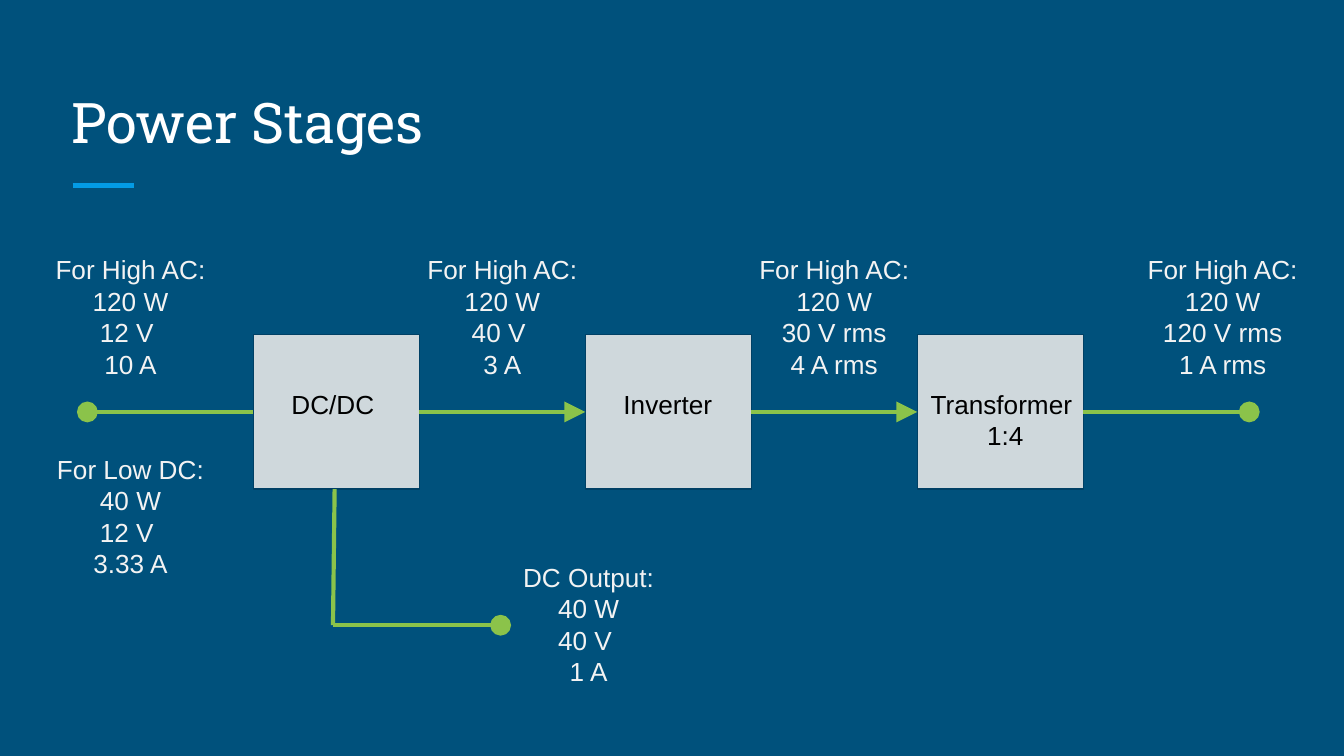
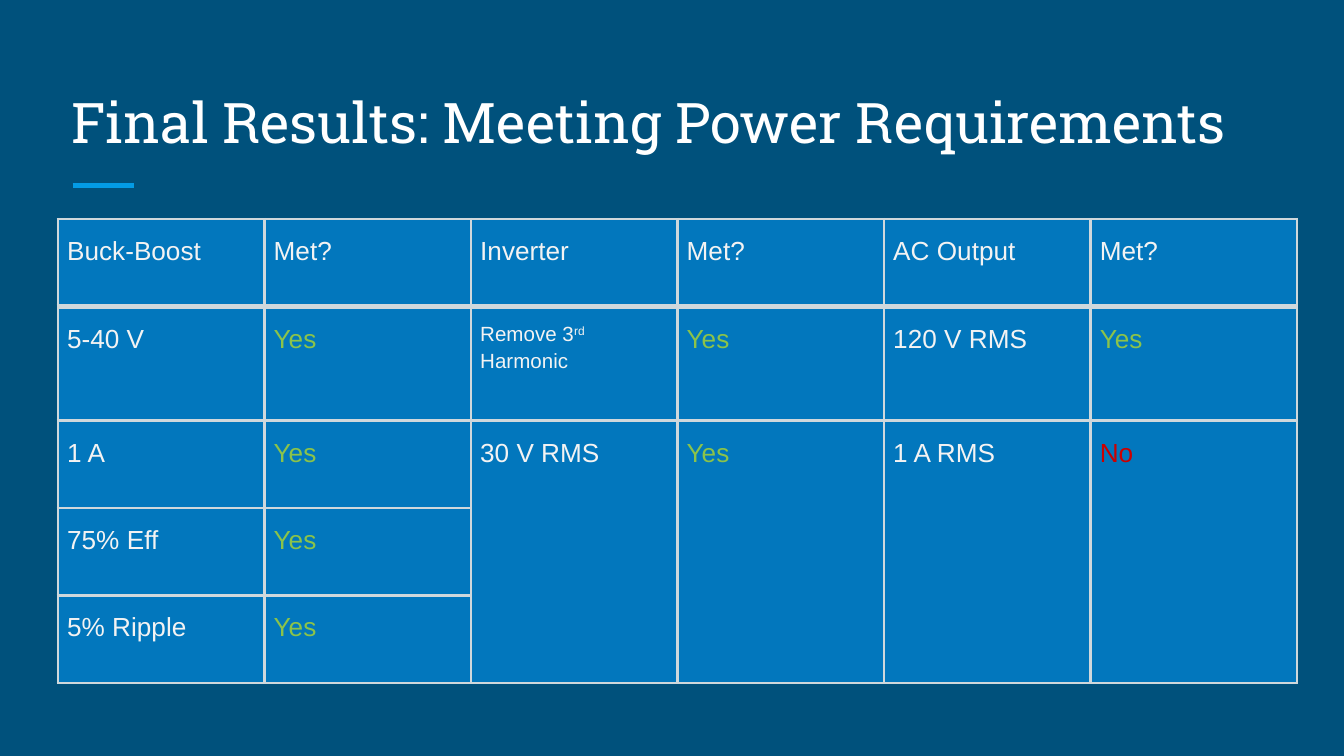
from typing import NamedTuple

from pptx import Presentation
from pptx.dml.color import RGBColor
from pptx.enum.shapes import MSO_CONNECTOR as Connector, MSO_SHAPE as Preset
from pptx.enum.text import MSO_ANCHOR as Anchor, MSO_AUTO_SIZE as AutoSize, PP_ALIGN as Align
from pptx.oxml.ns import qn
from pptx.oxml.xmlchemy import OxmlElement
from pptx.util import Emu, Inches, Pt

NAVY = RGBColor(0x00, 0x51, 0x7C)
DARK_NAVY = RGBColor(0x00, 0x40, 0x65)
CELL_BLUE = RGBColor(0x02, 0x77, 0xBD)
ACCENT = RGBColor(0x03, 0x9B, 0xE5)
PALE = RGBColor(0xCF, 0xD8, 0xDC)
GREEN = RGBColor(0x8B, 0xC3, 0x4A)
RED = RGBColor(0xCC, 0x00, 0x00)
WHITE = RGBColor(0xFF, 0xFF, 0xFF)
OFF_WHITE = RGBColor(0xF3, 0xF3, 0xF3)
BLACK = RGBColor(0x00, 0x00, 0x00)

TITLE_FONT = "Roboto Slab"
BODY_FONT = "Arial"
TITLE_ONLY = 5
SLIDE_WIDTH = Inches(10)
SLIDE_HEIGHT = SLIDE_WIDTH * 9 // 16

GRID_LEFT, GRID_TOP = Inches(0.65), Inches(2.49)
COLUMN, ROW = Inches(2.47) // 2, Inches(1.15)
WIRE_ROW, OUTPUT_ROW = 0.5, 1.88
DROP_COLUMN = 1.48
INSET = Inches(0.1)

CONTENT_LEFT = Inches(0.43)
TABLE_TOP, TABLE_WIDTH = Inches(1.63), Inches(9.22)
ROW_HEIGHTS = (0.65, 0.85, 0.65, 0.65, 0.65)
RESULTS = (
    ("Buck-Boost", "Met?", "Inverter", "Met?", "AC Output", "Met?"),
    ("5-40 V", "Yes", "Remove 3^rd^ Harmonic", "Yes", "120 V RMS", "Yes"),
    ("1 A", "Yes", "30 V RMS", "Yes", "1 A RMS", "No"),
    ("75% Eff", "Yes"),
    ("5% Ripple", "Yes"),
)
ANSWER_COLORS = {"Yes": GREEN, "No": RED}


class Wire(NamedTuple):
    start: tuple[float, float]
    end: tuple[float, float]
    head: str = ""
    tail: str = ""


class Label(NamedTuple):
    column: float
    row: float
    columns: float
    rows: float
    lines: tuple[str, ...]
    color: RGBColor
    alignments: tuple[Align, ...]


def block_label(column: float, columns: float, *lines: str) -> Label:
    return Label(column, 0.26, columns, 0.65, lines, BLACK, (Align.LEFT, Align.CENTER))


def rating(column: float, row: float, *lines: str) -> Label:
    return Label(column, row, 1.12, 1, lines, OFF_WHITE, (Align.CENTER,) * len(lines))


BLOCK_COLUMNS = (1, 3, 5)
WIRES = (
    Wire((2, WIRE_ROW), (3, WIRE_ROW), tail="triangle"),
    Wire((4, WIRE_ROW), (5, WIRE_ROW), tail="triangle"),
    Wire((0, WIRE_ROW), (1, WIRE_ROW), head="oval"),
    Wire((6, WIRE_ROW), (7, WIRE_ROW), tail="oval"),
    Wire((DROP_COLUMN, OUTPUT_ROW), (DROP_COLUMN + 1.01, OUTPUT_ROW), tail="oval"),
    Wire((DROP_COLUMN, OUTPUT_ROW), (DROP_COLUMN + 0.01, 1)),
)
LABELS = (
    block_label(1.15, 0.81, "DC/DC"),
    block_label(3.15, 0.81, "Inverter"),
    block_label(5, 1.06, "Transformer", "1:4"),
    rating(-0.3, -0.61, "For High AC:", "120 W", "12 V ", "10 A"),
    rating(-0.3, 0.68, "For Low DC:", "40 W", "12 V ", "3.33 A"),
    rating(2.46, 1.38, "DC Output:", "40 W", "40 V ", "1 A"),
    rating(1.94, -0.61, "For High AC:", "120 W", "40 V ", "3 A"),
    rating(3.94, -0.61, "For High AC:", "120 W", "30 V rms", "4 A rms"),
    rating(6.28, -0.61, "For High AC:", "120 W", "120 V rms", "1 A rms"),
)


def grid_point(column: float, row: float) -> tuple[Emu, Emu]:
    return Emu(round(GRID_LEFT + column * COLUMN)), Emu(round(GRID_TOP + row * ROW))


def grid_size(columns: float, rows: float) -> tuple[Emu, Emu]:
    return Emu(round(columns * COLUMN)), Emu(round(rows * ROW))


def format_run(run, size: float, color: RGBColor, name: str = BODY_FONT) -> None:
    run.font.name = name
    run.font.size = Pt(size)
    run.font.color.rgb = color


def set_insets(target, horizontal: Emu, vertical: Emu) -> None:
    target.margin_left = target.margin_right = horizontal
    target.margin_top = target.margin_bottom = vertical


def add_line(slide, start: tuple, end: tuple, color: RGBColor, width: float,
             head: str = "", tail: str = "") -> None:
    connector = slide.shapes.add_connector(Connector.STRAIGHT, *start, *end)
    connector.line.color.rgb = color
    connector.line.width = Pt(width)
    properties = connector.element.spPr
    outline = properties.find(qn("a:ln"))
    for tag, kind in (("a:headEnd", head), ("a:tailEnd", tail)):
        if kind:
            arrowhead = OxmlElement(tag)
            arrowhead.set("type", kind)
            arrowhead.set("w", "lg")
            arrowhead.set("len", "lg")
            outline.append(arrowhead)
    properties.append(OxmlElement("a:effectLst"))


def add_titled_slide(presentation, title: str):
    slide = presentation.slides.add_slide(presentation.slide_layouts[TITLE_ONLY])
    add_line(slide, (Inches(0.54), Inches(1.38)), (Inches(1), Inches(1.38)), ACCENT, 3)
    shape = slide.shapes.title
    shape.left, shape.top = CONTENT_LEFT, Inches(0.5)
    shape.width, shape.height = Inches(9.15), Inches(0.75)
    text_frame = shape.text_frame
    text_frame.text = title
    text_frame.auto_size = AutoSize.NONE
    text_frame.vertical_anchor = Anchor.BOTTOM
    set_insets(text_frame, INSET, INSET)
    paragraph = text_frame.paragraphs[0]
    paragraph.alignment = Align.LEFT
    format_run(paragraph.runs[0], 30, WHITE, TITLE_FONT)
    return slide


def add_block(slide, column: float) -> None:
    shape = slide.shapes.add_shape(Preset.RECTANGLE, *grid_point(column, 0), *grid_size(1, 1))
    shape.shadow.inherit = False
    shape.fill.solid()
    shape.fill.fore_color.rgb = PALE
    shape.line.color.rgb = DARK_NAVY
    shape.line.width = Pt(0.75)


def add_label(slide, label: Label) -> None:
    text_box = slide.shapes.add_textbox(
        *grid_point(label.column, label.row), *grid_size(label.columns, label.rows))
    text_frame = text_box.text_frame
    text_frame.word_wrap = True
    set_insets(text_frame, INSET, INSET)
    text_frame.text = "\n".join(label.lines)
    for paragraph, alignment in zip(text_frame.paragraphs, label.alignments):
        paragraph.alignment = alignment
        format_run(paragraph.runs[0], 14, label.color)


def set_borders(cell, widths: dict[str, float]) -> None:
    properties = cell._tc.get_or_add_tcPr()
    for side, width in widths.items():
        border = OxmlElement(f"a:ln{side}")
        border.set("w", str(Pt(width)))
        fill = OxmlElement("a:solidFill")
        color = OxmlElement("a:srgbClr")
        color.set("val", str(PALE))
        fill.append(color)
        border.append(fill)
        properties.append(border)


def fill_cell(cell, text: str) -> None:
    paragraph = cell.text_frame.paragraphs[0]
    paragraph.line_spacing = 1.15
    size = 11 if "^" in text else 14
    for index, part in enumerate(text.split("^")):
        run = paragraph.add_run()
        run.text = part
        format_run(run, size, ANSWER_COLORS.get(text, OFF_WHITE))
        if index % 2:
            run._r.get_or_add_rPr().set("baseline", "30000")


def add_results_table(slide) -> None:
    row_count, column_count = len(RESULTS), len(RESULTS[0])
    table = slide.shapes.add_table(
        row_count, column_count, CONTENT_LEFT, TABLE_TOP, TABLE_WIDTH,
        Inches(sum(ROW_HEIGHTS))).table
    table.first_row = table.horz_banding = False
    for row, height in zip(table.rows, ROW_HEIGHTS):
        row.height = Inches(height)
    for row_index, texts in enumerate(RESULTS):
        for column_index in range(column_count):
            cell = table.cell(row_index, column_index)
            set_borders(cell, {"L": 1.5, "R": 1.5,
                               "T": 3 if row_index == 1 else 1.5,
                               "B": 3 if row_index == 0 else 1.5})
            cell.fill.solid()
            cell.fill.fore_color.rgb = CELL_BLUE
            set_insets(cell, Inches(0.07), INSET)
            if column_index < len(texts):
                fill_cell(cell, texts[column_index])
    for column_index in range(2, column_count):
        table.cell(2, column_index).merge(table.cell(row_count - 1, column_index))


def build_power_stages(presentation) -> None:
    slide = add_titled_slide(presentation, "Power Stages")
    for column in BLOCK_COLUMNS:
        add_block(slide, column)
    for wire in WIRES:
        add_line(slide, grid_point(*wire.start), grid_point(*wire.end), GREEN, 2.25,
                 wire.head, wire.tail)
    for label in LABELS:
        add_label(slide, label)


def build_final_results(presentation) -> None:
    slide = add_titled_slide(presentation, "Final Results: Meeting Power Requirements")
    add_results_table(slide)


def main() -> None:
    presentation = Presentation()
    presentation.slide_width, presentation.slide_height = SLIDE_WIDTH, SLIDE_HEIGHT
    background = presentation.slide_master.background.fill
    background.solid()
    background.fore_color.rgb = NAVY
    build_power_stages(presentation)
    build_final_results(presentation)
    presentation.save("out.pptx")


if __name__ == "__main__":
    main()
